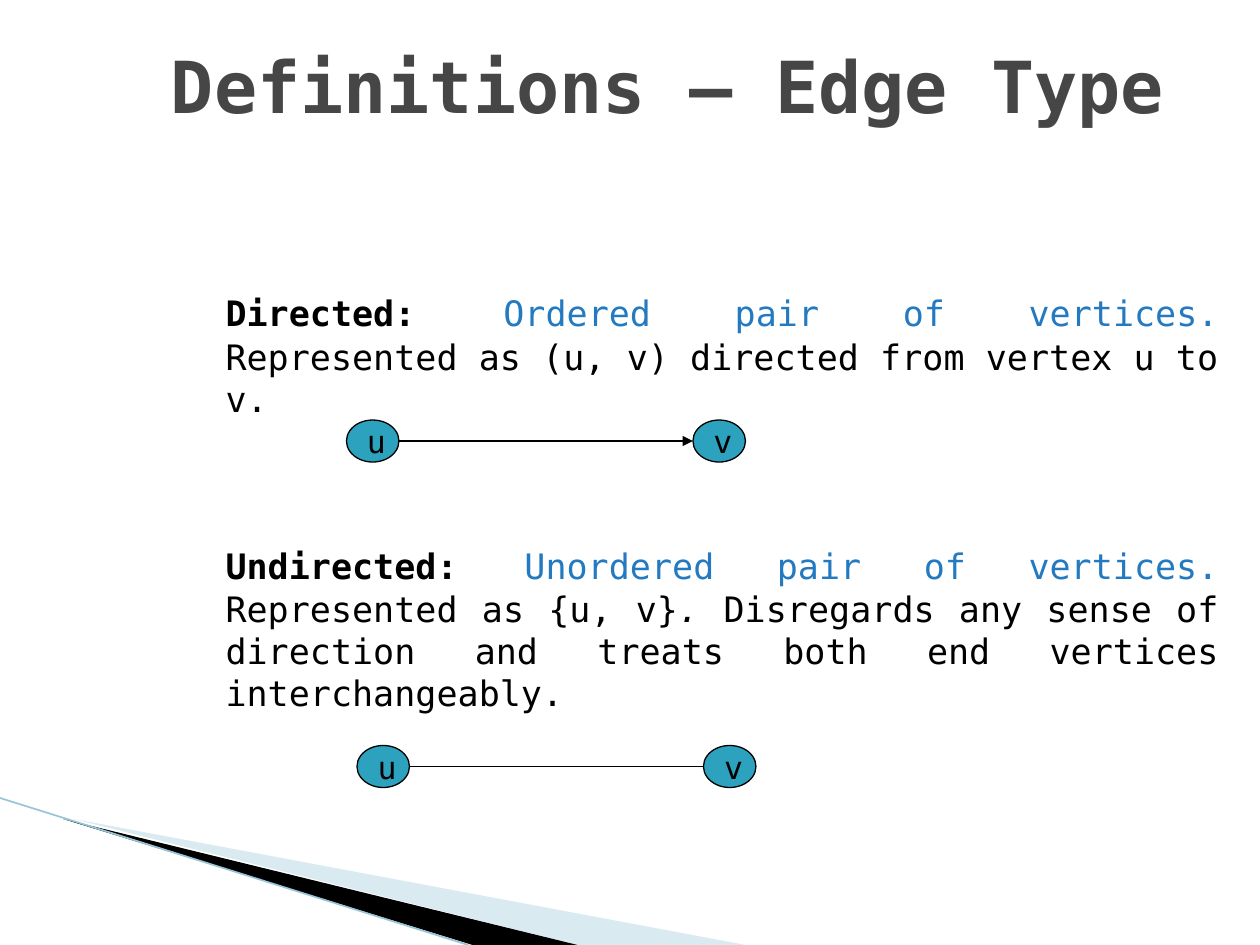
"""Build a slide that defines directed and undirected graph edges."""
from typing import NamedTuple

from lxml import etree
from pptx import Presentation
from pptx.dml.color import RGBColor
from pptx.enum.shapes import MSO_CONNECTOR, MSO_SHAPE
from pptx.enum.text import MSO_ANCHOR, PP_ALIGN
from pptx.oxml.ns import qn
from pptx.util import Inches, Pt

LINE, OVAL = MSO_CONNECTOR.STRAIGHT, MSO_SHAPE.OVAL
MIDDLE, TOP = MSO_ANCHOR.MIDDLE, MSO_ANCHOR.TOP
CENTER, LEFT, JUSTIFY = PP_ALIGN.CENTER, PP_ALIGN.LEFT, PP_ALIGN.JUSTIFY

BLACK = RGBColor(0x00, 0x00, 0x00)
GRAY = RGBColor(0x46, 0x46, 0x46)
BLUE = RGBColor(0x23, 0x7A, 0xC1)
TEAL = RGBColor(0x2D, 0xA2, 0xBF)
PALE = RGBColor(0xA0, 0xCB, 0xDC)
RIM = RGBColor(0x97, 0xC5, 0xD8)

FONT = "DejaVu Sans Mono"
WIDE, HIGH = Inches(10), Inches(7.5)
COLS, ROWS = 120, 90
CELL = WIDE / COLS
NODE_W, NODE_H, SPAN = 5, 4, 33


class Run(NamedTuple):
    """A piece of text with its format."""
    text: str
    size: float = 20
    color: RGBColor = BLACK
    bold: bool = False
    italic: bool = False


class Box(NamedTuple):
    """A text frame in grid units, with its insets in inches."""
    col: float
    row: float
    cols: float
    rows: float
    top: float
    right: float


class Edge(NamedTuple):
    """A pair of joined nodes, placed by the first one's corner."""
    col: float
    row: float
    arrow: bool


class Wedge(NamedTuple):
    """A filled corner outline in grid units."""
    points: list
    color: RGBColor
    alpha: int


WEDGES = [
    Wedge([(6.6, 78.1), (71.4, 90), (54.7, 90), (6.6, 78)], PALE, 40),
    Wedge([(6.4, 77.9), (54.8, 90), (44.6, 90), (6.5, 78)], BLACK, 100),
]
TITLE = [[Run("Definitions – Edge Type", 41, GRAY, True)]]
BODY = [
    [Run("Directed:", bold=True), Run(" ", 24, italic=True),
     Run("Ordered pair of vertices. ", color=BLUE),
     Run("Represented as (u, v) directed from vertex u to v.")],
    [Run("Undirected:", bold=True), Run(" ", 24),
     Run("Unordered pair of vertices. ", color=BLUE),
     Run("Represented as {u, v}"), Run(". ", italic=True),
     Run("Disregards any sense of direction and treats both end "
         "vertices interchangeably.")],
]
EDGES = [Edge(33, 40, True), Edge(34, 71, False)]


def grid(*units: float) -> list:
    """Turn grid units into lengths."""
    return [round(unit * CELL) for unit in units]


def style(item, form: dict) -> None:
    """Set each format value on an item."""
    for name, value in form.items():
        setattr(item, name, value)


def write(para, runs: list) -> None:
    """Add formatted runs to a paragraph."""
    for part in runs:
        run = para.add_run()
        run.text = part.text
        style(run.font, {"name": FONT, "size": Pt(part.size),
                         "bold": part.bold, "italic": part.italic})
        run.font.color.rgb = part.color


def add_text(slide, box: Box, paras: list, form: dict) -> None:
    """Add a text box with one format for all paragraphs."""
    frame = slide.shapes.add_textbox(*grid(*box[:4])).text_frame
    style(frame, {"word_wrap": True, "vertical_anchor": TOP,
                  "margin_top": Inches(box.top),
                  "margin_right": Inches(box.right)})
    for index, runs in enumerate(paras):
        para = frame.add_paragraph() if index else frame.paragraphs[0]
        style(para, form)
        if index:
            para.space_before = Pt(72)
        write(para, runs)


def add_wedge(slide, wedge: Wedge) -> None:
    """Draw a filled outline with its opacity."""
    start, *rest = wedge.points
    pen = slide.shapes.build_freeform(*start, scale=CELL)
    pen.add_line_segments(rest, close=True)
    shape = pen.convert_to_shape()
    shape.shadow.inherit = False
    shape.fill.solid()
    shape.fill.fore_color.rgb = wedge.color
    shape.line.fill.background()
    if wedge.alpha < 100:
        tint = shape.fill._xPr.find(".//" + qn("a:srgbClr"))
        etree.SubElement(tint, qn("a:alpha"), val=str(wedge.alpha * 1000))


def add_line(slide, ends: tuple, color: RGBColor, width: float,
             arrow: bool = False) -> None:
    """Draw a straight line, with an arrowhead if asked."""
    link = slide.shapes.add_connector(LINE, *grid(*ends))
    link.line.color.rgb = color
    link.line.width = Pt(width)
    if arrow:
        etree.SubElement(link.line._get_or_add_ln(), qn("a:tailEnd"),
                         type="triangle")
    etree.SubElement(link._element.spPr, qn("a:effectLst"))


def add_node(slide, col: float, row: float, name: str) -> None:
    """Draw a named vertex."""
    node = slide.shapes.add_shape(OVAL, *grid(col, row, NODE_W, NODE_H))
    node.shadow.inherit = False
    node.fill.solid()
    node.fill.fore_color.rgb = TEAL
    node.line.color.rgb = BLACK
    node.line.width = Pt(0.75)
    frame = node.text_frame
    style(frame, {"word_wrap": False, "vertical_anchor": MIDDLE,
                  "margin_left": Inches(0.06), "margin_right": 0})
    frame.paragraphs[0].alignment = CENTER
    write(frame.paragraphs[0], [Run(name, 18)])


def add_edge(slide, edge: Edge) -> None:
    """Draw two vertices and the line between them."""
    far, mid = edge.col + SPAN, edge.row + NODE_H / 2
    add_node(slide, edge.col, edge.row, "u")
    add_node(slide, far, edge.row, "v")
    add_line(slide, (edge.col + NODE_W, mid, far, mid), BLACK, 0.75,
             edge.arrow)


def main() -> None:
    """Build and save the slide."""
    deck = Presentation()
    style(deck, {"slide_width": WIDE, "slide_height": HIGH})
    slide = deck.slides.add_slide(deck.slide_layouts[6])
    for wedge in WEDGES:
        add_wedge(slide, wedge)
    add_line(slide, (0, 76, 44.6, ROWS), RIM, 0.95)
    add_text(slide, Box(15.1, 2.8, 102.2, 19.2, 0.1, 0.1), TITLE,
             {"alignment": LEFT})
    add_text(slide, Box(20.3, 26.5, 97.2, 54, 0.12, 0.12), BODY,
             {"alignment": JUSTIFY, "line_spacing": Pt(24)})
    for edge in EDGES:
        add_edge(slide, edge)
    deck.save("out.pptx")


if __name__ == "__main__":
    main()
